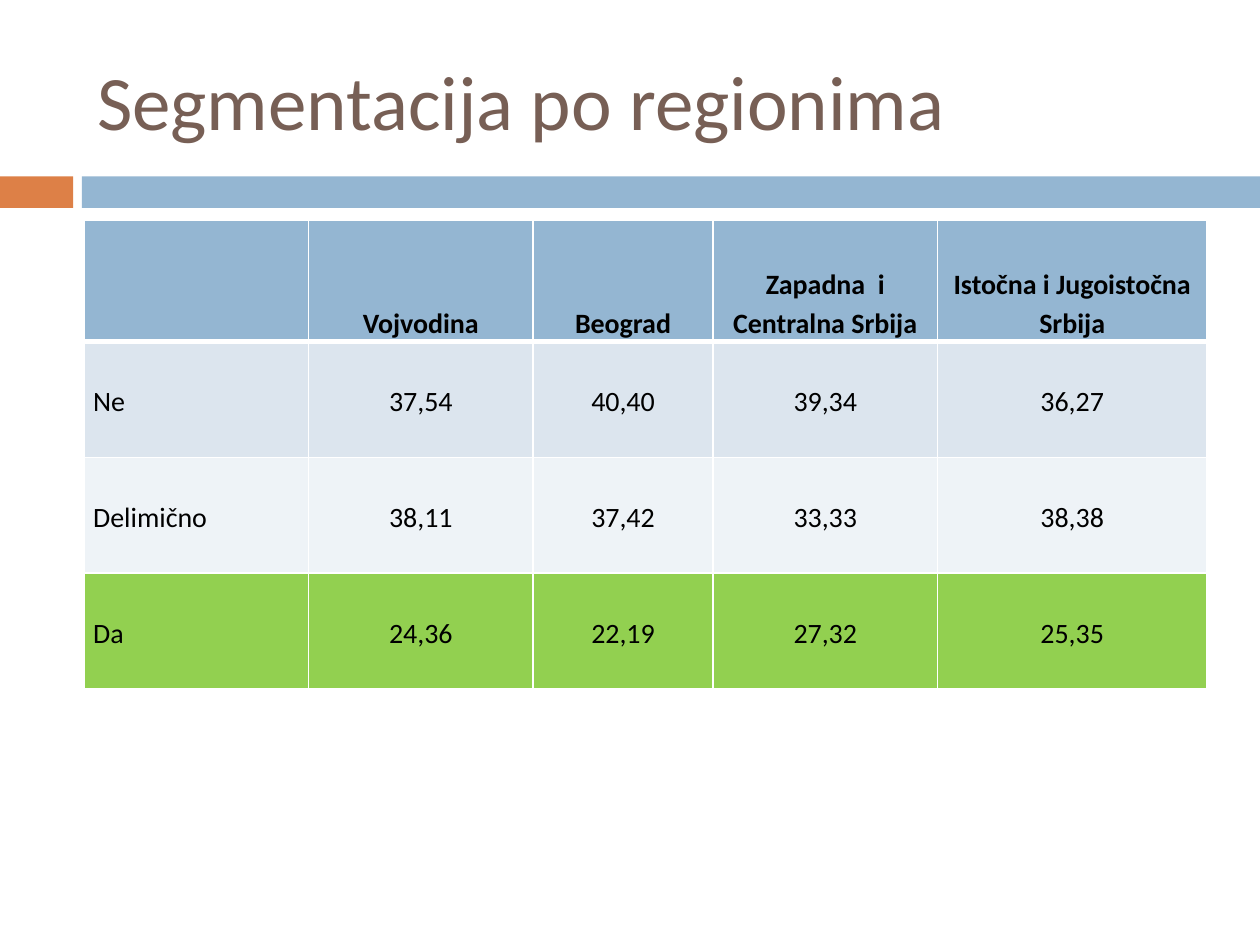
from dataclasses import dataclass

from lxml.etree import SubElement
from pptx import Presentation
from pptx.dml.color import RGBColor
from pptx.enum.shapes import MSO_SHAPE as Shape
from pptx.enum.text import MSO_ANCHOR as Anchor, MSO_AUTO_SIZE as Fit, PP_ALIGN as Align
from pptx.oxml.ns import qn
from pptx.slide import Slide
from pptx.table import _Cell as Cell
from pptx.util import Inches, Pt

BLUE = RGBColor(0x94, 0xB6, 0xD2)
ORANGE = RGBColor(0xDD, 0x80, 0x47)
BROWN = RGBColor(0x77, 0x5F, 0x55)
PALE = RGBColor(0xDC, 0xE5, 0xEE)
LIGHT = RGBColor(0xEE, 0xF3, 0xF7)
GREEN = RGBColor(0x92, 0xD0, 0x50)
WHITE = RGBColor(0xFF, 0xFF, 0xFF)
BLACK = RGBColor(0, 0, 0)
FONT = "Calibri"
LEFT, WIDTH = 0.67, 8.92


@dataclass
class Bar:
    left: float
    width: float
    color: RGBColor


@dataclass
class Row:
    texts: list[str]
    color: RGBColor
    height: float = 0.92
    head: bool = False


BARS = [Bar(0, 0.58, ORANGE), Bar(0.65, 9.35, BLUE)]
COLS = [1.78, 1.78, 1.43, 1.78, 2.14]
ROWS = [
    Row(["", "Vojvodina", "Beograd", "Zapadna  i Centralna Srbija",
         "Istočna i Jugoistočna Srbija"], BLUE, 0.96, True),
    Row(["Ne", "37,54", "40,40", "39,34", "36,27"], PALE),
    Row(["Delimično", "38,11", "37,42", "33,33", "38,38"], LIGHT),
    Row(["Da", "24,36", "22,19", "27,32", "25,35"], GREEN),
]


def draw_bar(slide: Slide, bar: Bar) -> None:
    shape = slide.shapes.add_shape(
        Shape.RECTANGLE, Inches(bar.left), Inches(1.4), Inches(bar.width), Inches(0.25))
    shape.shadow.inherit = False
    shape.fill.solid()
    shape.fill.fore_color.rgb = bar.color
    shape.line.fill.background()


def set_title(slide: Slide, text: str) -> None:
    title = slide.shapes.title
    title.left, title.top = Inches(LEFT), Inches(0.25)
    title.width, title.height = Inches(WIDTH), Inches(1.08)
    frame = title.text_frame
    frame.text = text
    frame.auto_size = Fit.NONE
    frame.vertical_anchor = Anchor.MIDDLE
    para = frame.paragraphs[0]
    para.alignment = Align.LEFT
    font = para.runs[0].font
    font.name, font.size = FONT, Pt(44)
    font.color.rgb = BROWN


def set_edges(cell: Cell, top: float, base: float) -> None:
    props = cell._tc.get_or_add_tcPr()
    for side, width in zip("LRTB", (1, 1, top, base)):
        line = SubElement(props, qn(f"a:ln{side}"), w=str(Pt(width)))
        fill = SubElement(line, qn("a:solidFill"))
        SubElement(fill, qn("a:srgbClr"), val=str(WHITE))


def set_cell(cell: Cell, text: str, row: Row, first: bool) -> None:
    cell.fill.solid()
    cell.fill.fore_color.rgb = row.color
    cell.margin_left = cell.margin_right = Inches(0.07)
    cell.margin_top = cell.margin_bottom = 0
    cell.vertical_anchor = Anchor.BOTTOM if row.head else Anchor.MIDDLE
    cell.text_frame.text = text
    para = cell.text_frame.paragraphs[0]
    para.alignment = Align.LEFT if first else Align.CENTER
    para.line_spacing = 1.15
    if not (row.head or first):
        para.space_after = Pt(10)
    for run in para.runs:
        font = run.font
        font.name, font.size, font.bold = FONT, Pt(16), row.head
        font.color.rgb = BLACK


def draw_table(slide: Slide) -> None:
    table = slide.shapes.add_table(
        len(ROWS), len(COLS), Inches(LEFT), Inches(1.75), Inches(WIDTH),
        Inches(sum(row.height for row in ROWS))).table
    for col, width in zip(table.columns, COLS):
        col.width = Inches(width)
    for i, row in enumerate(ROWS):
        table.rows[i].height = Inches(row.height)
        for j, text in enumerate(row.texts):
            cell = table.cell(i, j)
            set_edges(cell, 3 if i == 1 else 1, 3 if row.head else 1)
            set_cell(cell, text, row, j == 0)


def main() -> None:
    deck = Presentation()
    deck.slide_width, deck.slide_height = Inches(10), Inches(7.5)
    slide = deck.slides.add_slide(deck.slide_layouts[5])
    for bar in BARS:
        draw_bar(slide, bar)
    set_title(slide, "Segmentacija po regionima")
    draw_table(slide)
    deck.save("out.pptx")


if __name__ == "__main__":
    main()
